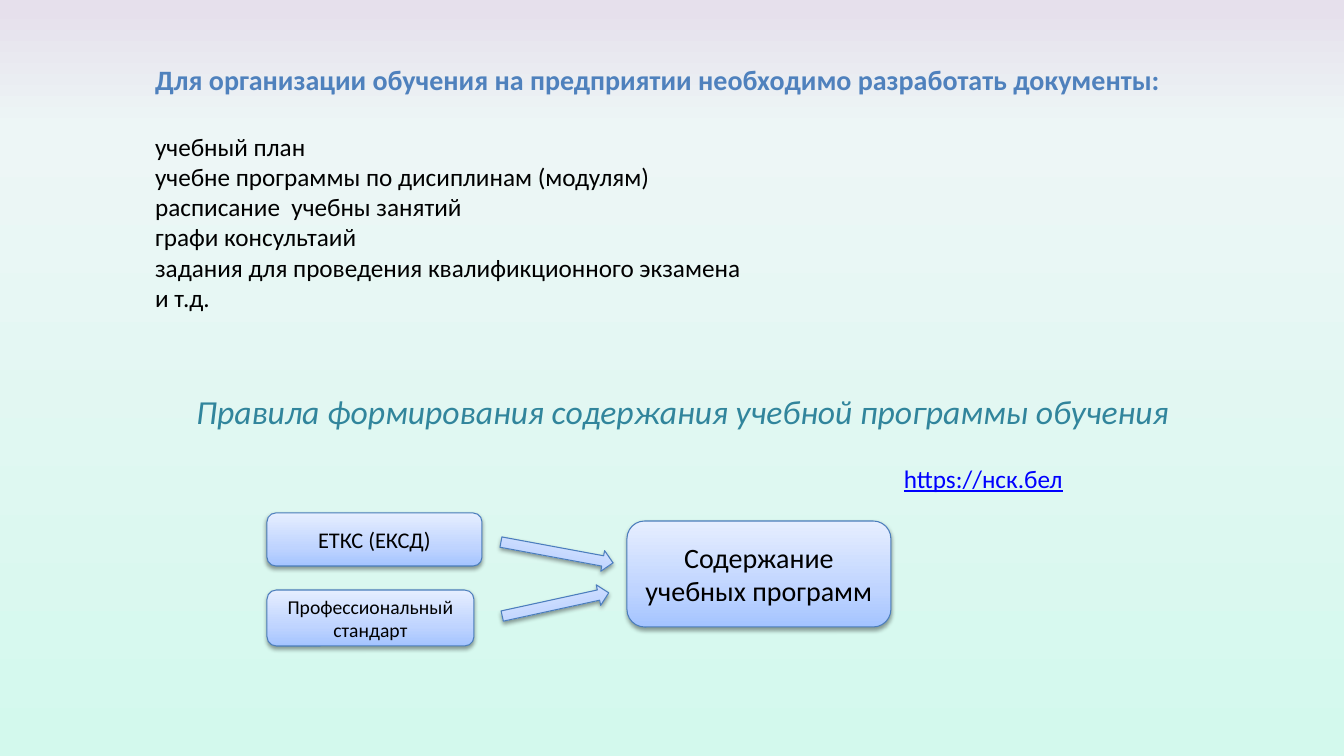
from dataclasses import dataclass

from lxml.etree import SubElement as Sub
from pptx import Presentation
from pptx.dml.color import RGBColor as Rgb
from pptx.enum.shapes import MSO_SHAPE as Kind
from pptx.enum.text import MSO_ANCHOR as Anchor, MSO_AUTO_SIZE as Fit, PP_ALIGN as Align
from pptx.oxml.ns import qn
from pptx.util import Emu, Pt

WIDE, HIGH = 1344, 756
SCALE = 12192000 / WIDE
LAYOUT = 3  # title and two bodies


@dataclass(frozen=True)
class Theme:
    face: str = "Calibri"
    ink: str = "000000"
    head: str = "4F81BD"
    rule: str = "31859C"
    link: str = "0000FF"
    edge: str = "4B7EBC"
    sky: tuple = ((1, "E6E0EC"), (17, "EDF6F6"), (100, "D3F9ED"))
    glow: tuple = ((0, "A4C4FF"), (35, "BFD4FF"), (100, "E6EEFF"))
    small: int = 14
    label: int = 16
    body: int = 18
    large: int = 20
    lead: int = 24


def px(count):
    return Emu(round(count * SCALE))


class Deck:
    def __init__(self, theme):
        self.theme = theme
        self.file = Presentation()
        self.file.slide_width, self.file.slide_height = px(WIDE), px(HIGH)
        self.slide = self.file.slides.add_slide(self.file.slide_layouts[LAYOUT])
        back = self.slide.background.fill
        self.blend(back, self.slide.element, theme.sky, 90)

    def blend(self, fill, root, stops, angle):
        """Give a fill a gradient with any number of stops; root holds its XML."""
        fill.gradient()
        grad = next(root.iter(qn("a:gradFill")))
        chain = grad.find(qn("a:gsLst"))
        for old in list(chain):
            chain.remove(old)
        for pos, tint in stops:
            stop = Sub(chain, qn("a:gs"), pos=str(pos * 1000))
            Sub(stop, qn("a:srgbClr"), val=tint)
        grad.find(qn("a:lin")).set("ang", str(angle * 60000))

    def letter(self, shape, lines, size, tint, align, anchor=Anchor.TOP, **extra):
        """Put styled text, one paragraph a line, into a shape."""
        frame = shape.text_frame
        frame.text = "\n".join(lines)
        setup = dict(word_wrap=True, auto_size=Fit.NONE, vertical_anchor=anchor)
        for name, value in setup.items():
            setattr(frame, name, value)
        style = dict(name=self.theme.face, size=Pt(size), **extra)
        for para in frame.paragraphs:
            para.alignment = align
            for run in para.runs:
                for name, value in style.items():
                    setattr(run.font, name, value)
                run.font.color.rgb = Rgb.from_string(tint)

    def place(self, shape, box):
        for name, value in zip(("left", "top", "width", "height"), box):
            setattr(shape, name, px(value))

    def title(self, box, text, *style, **extra):
        shape = self.slide.shapes.title
        self.place(shape, box)
        self.letter(shape, [text], *style, **extra)

    def body(self, slot, box, lines, *style, gap=0, **extra):
        """Fill a body placeholder with unbulleted lines."""
        shape = self.slide.placeholders[slot]
        self.place(shape, box)
        self.letter(shape, lines, *style, **extra)
        for para in shape.text_frame.paragraphs:
            para.space_before = Pt(gap)
            props = para._p.get_or_add_pPr()
            for name in ("marL", "indent"):
                props.set(name, "0")
            Sub(props, qn("a:buNone"))

    def text(self, box, text, *style, **extra):
        shape = self.slide.shapes.add_textbox(*map(px, box))
        self.letter(shape, [text], *style, **extra)

    def block(self, kind, box, turn=0):
        """Add a glossy shape with a soft shadow below it."""
        shape = self.slide.shapes.add_shape(kind, *map(px, box))
        shape.rotation = turn
        self.blend(shape.fill, shape.element, self.theme.glow, 270)
        shape.line.color.rgb = Rgb.from_string(self.theme.edge)
        shape.line.width = Pt(0.75)
        shape.shadow.inherit = False
        cast = Sub(shape.element.spPr.find(qn("a:effectLst")), qn("a:outerShdw"),
                   blurRad="40000", dist="20000", dir="5400000", rotWithShape="0")
        tone = Sub(cast, qn("a:srgbClr"), val="000000")
        Sub(tone, qn("a:alpha"), val="38000")
        return shape

    def card(self, box, text, size):
        shape = self.block(Kind.ROUNDED_RECTANGLE, box)
        self.letter(shape, [text], size, self.theme.ink, Align.CENTER, Anchor.MIDDLE)

    def arrow(self, box, turn):
        self.block(Kind.RIGHT_ARROW, box, turn)


def main():
    look = Theme()
    deck = Deck(look)
    deck.title((145, 57, 1075, 46),
               "Для организации обучения на предприятии необходимо разработать документы:",
               look.large, look.head, Align.JUSTIFY, bold=True)
    deck.body(1, (145, 126, 1075, 223), [
        "учебный план",
        "учебне программы по дисиплинам (модулям)",
        "расписание  учебны занятий",
        "графи консультаий",
        "задания для проведения квалификционного экзамена",
        "и т.д.",
    ], look.body, look.ink, Align.JUSTIFY)
    deck.body(2, (34, 386, 1297, 349),
              ["Правила формирования содержания учебной программы обучения"],
              look.lead, look.rule, Align.CENTER, gap=5, italic=True)

    deck.card((267, 513, 215, 53), "ЕТКС (ЕКСД)", look.label)
    deck.card((267, 590, 207, 56), "Профессиональный стандарт", look.small)
    deck.arrow((500, 542, 114, 21), 10.5)
    deck.arrow((501, 594, 109, 21), 347.7)
    deck.card((627, 521, 264, 106), "Содержание учебных программ", look.large)
    deck.text((894, 458, 223, 40), "https://нск.бел",
              look.body, look.link, Align.LEFT, underline=True)
    deck.file.save("out.pptx")


if __name__ == "__main__":
    main()
